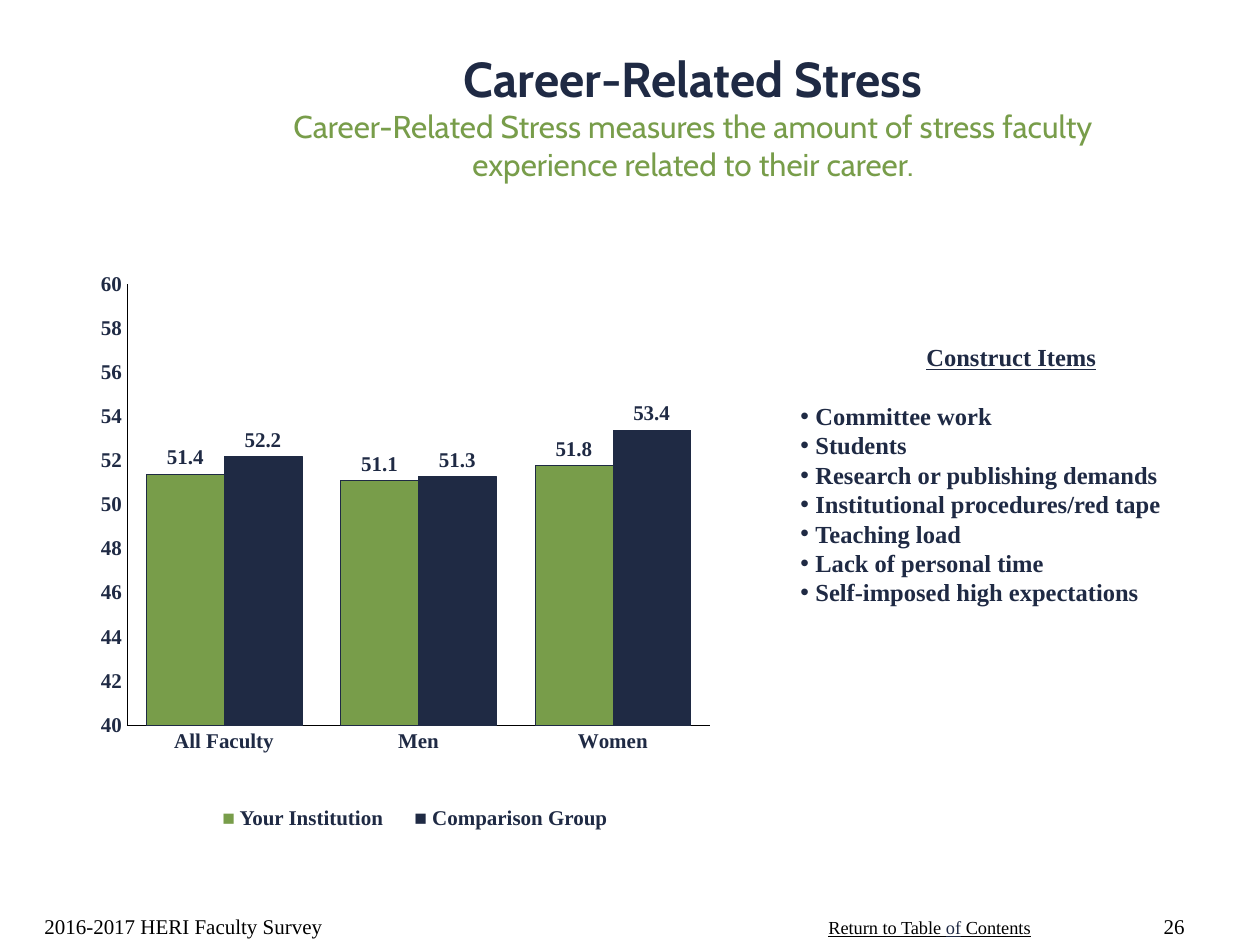
from lxml import etree
from pptx import Presentation
from pptx import util as u
from pptx.chart.data import CategoryChartData
from pptx.dml.color import RGBColor
from pptx.enum import chart as ch, text
from pptx.oxml import parse_xml
from pptx.oxml.ns import nsdecls, qn

NAVY = RGBColor(0x1F, 0x2A, 0x44)
GREEN = RGBColor(0x78, 0x9D, 0x4A)
BLACK = RGBColor(0, 0, 0)
SERIF, SANS = "Times New Roman", "Cabin"

TITLE = "Career-Related Stress"
SUBTITLE = ["Career-Related Stress measures the amount of stress faculty",
            "experience related to their career."]
GROUPS = ["All Faculty", "Men", "Women"]
SERIES = [("Your Institution", (51.4, 51.1, 51.8), GREEN),
          ("Comparison Group", (52.2, 51.3, 53.4), NAVY)]
ITEMS_HEADING = "Construct Items"
ITEMS = ["Committee work", "Students", "Research or publishing demands",
         "Institutional procedures/red tape", "Teaching load",
         "Lack of personal time", "Self-imposed high expectations"]
SURVEY = "2016-2017 HERI Faculty Survey"
RETURN_PARTS = [("Return to Table ", BLACK), ("of", NAVY), (" Contents", BLACK)]
PAGE = "26"
PLOT = {"x": 0.155, "y": 0.112, "w": 0.712, "h": 0.777}


def px(n):
    return u.Emu(round(n * 914400 / 126))


def add_run(paragraph, words, size, color, font=SERIF, bold=False, underline=None):
    run = paragraph.add_run()
    run.text = words
    run.font.size, run.font.name = u.Pt(size), font
    run.font.bold, run.font.underline = bold, underline
    run.font.color.rgb = color


def add_box(slide, left, top, width, height, anchor=text.MSO_ANCHOR.TOP, wrap=True):
    frame = slide.shapes.add_textbox(*map(px, (left, top, width, height))).text_frame
    frame.word_wrap = wrap
    frame.vertical_anchor = anchor
    return frame


def add_title(slide):
    title = slide.shapes.title
    title.left, title.top, title.width, title.height = map(px, (126, 21, 1134, 189))
    frame = title.text_frame
    frame.auto_size = text.MSO_AUTO_SIZE.NONE
    frame.vertical_anchor = text.MSO_ANCHOR.MIDDLE
    heading = frame.paragraphs[0]
    heading.alignment = text.PP_ALIGN.CENTER
    add_run(heading, TITLE, 28, NAVY, SANS, bold=True)
    for line in SUBTITLE:
        heading.add_line_break()
        add_run(heading, line, 18, GREEN, SANS)


def place_plot(chart):
    values = "".join(f'<c:{key} val="{val}"/>' for key, val in PLOT.items())
    modes = '<c:xMode val="edge"/><c:yMode val="edge"/>'
    layout = parse_xml(f'<c:layout {nsdecls("c")}><c:manualLayout>'
                       f'<c:layoutTarget val="inner"/>{modes}{values}'
                       '</c:manualLayout></c:layout>')
    plot_area = chart._chartSpace.chart.plotArea
    for old in plot_area.findall(qn("c:layout")):
        plot_area.remove(old)
    plot_area.insert(0, layout)


def add_stress_chart(slide):
    data = CategoryChartData(number_format="#,##0.0")
    data.categories = GROUPS
    for name, values, _ in SERIES:
        data.add_series(name, values)
    chart = slide.shapes.add_chart(ch.XL_CHART_TYPE.COLUMN_CLUSTERED,
                                   *map(px, (0, 221, 819, 567)), data).chart
    chart.has_title = chart.has_legend = False
    chart.font.size, chart.font.name, chart.font.bold = u.Pt(12), SERIF, True
    chart.font.color.rgb = NAVY
    for axis in (chart.category_axis, chart.value_axis):
        axis.major_tick_mark = axis.minor_tick_mark = ch.XL_TICK_MARK.NONE
        axis.has_major_gridlines = False
        axis.format.line.color.rgb = BLACK
        axis.format.line.width = u.Pt(0.27)
    scale = chart.value_axis
    scale.minimum_scale, scale.maximum_scale, scale.major_unit = 40, 60, 2
    scale.tick_labels.number_format = "#,##0"
    scale.tick_labels.number_format_is_linked = False

    plot = chart.plots[0]
    plot.gap_width, plot.overlap, plot.vary_by_categories = 50, 0, False
    plot.has_data_labels = True
    labels = plot.data_labels
    labels.show_value = True
    labels.number_format, labels.number_format_is_linked = "#,##0.0", False
    labels.position = ch.XL_LABEL_POSITION.OUTSIDE_END
    for bars, (_, _, color) in zip(plot.series, SERIES):
        bars.format.fill.solid()
        bars.format.fill.fore_color.rgb = color
        bars.format.line.color.rgb = NAVY
        bars.format.line.width = u.Pt(0.25)
    place_plot(chart)


def add_key(slide):
    key = add_box(slide, 210, 798, 441, 38).paragraphs[0]
    tabs = etree.SubElement(key._p.get_or_add_pPr(), qn("a:tabLst"))
    etree.SubElement(tabs, qn("a:tab"), pos=str(px(192)), algn="l")
    for i, (name, _, color) in enumerate(SERIES):
        add_run(key, "\t■" if i else "■", 12, color, bold=True)
        add_run(key, " " + name, 12, NAVY, bold=True)


def add_items(slide):
    line = u.Pt(16.8)
    frame = add_box(slide, 788, 336, 410, 431)
    heading = frame.paragraphs[0]
    heading.line_spacing = line
    heading._p.get_or_add_pPr().set("marL", str(px(126)))
    add_run(heading, ITEMS_HEADING, 14, NAVY, bold=True, underline=True)
    for i, item in enumerate(ITEMS):
        bullet = frame.add_paragraph()
        props = bullet._p.get_or_add_pPr()
        props.set("marL", str(px(15)))
        props.set("indent", str(-px(15)))
        etree.SubElement(props, qn("a:buFont"), typeface="Arial")
        etree.SubElement(props, qn("a:buChar"), char="•")
        bullet.line_spacing = line
        bullet.space_before = u.Pt(0) if i else line
        add_run(bullet, item, 14, NAVY, bold=True)


def add_footer(slide):
    bottom = text.MSO_ANCHOR.BOTTOM
    add_run(add_box(slide, 32, 882, 399, 63, bottom).paragraphs[0], SURVEY, 12, BLACK)
    back = add_box(slide, 816, 910, 229, 35, wrap=False).paragraphs[0]
    for words, color in RETURN_PARTS:
        add_run(back, words, 10.5, color, underline=True)
    number = add_box(slide, 1134, 882, 63, 63, bottom).paragraphs[0]
    number.alignment = text.PP_ALIGN.RIGHT
    add_run(number, PAGE, 12, BLACK)


def main():
    deck = Presentation()
    deck.slide_width, deck.slide_height = px(1260), px(945)
    slide = deck.slides.add_slide(deck.slide_layouts.get_by_name("Title Only"))
    add_title(slide)
    add_stress_chart(slide)
    add_key(slide)
    add_items(slide)
    add_footer(slide)
    deck.save("out.pptx")


if __name__ == "__main__":
    main()
